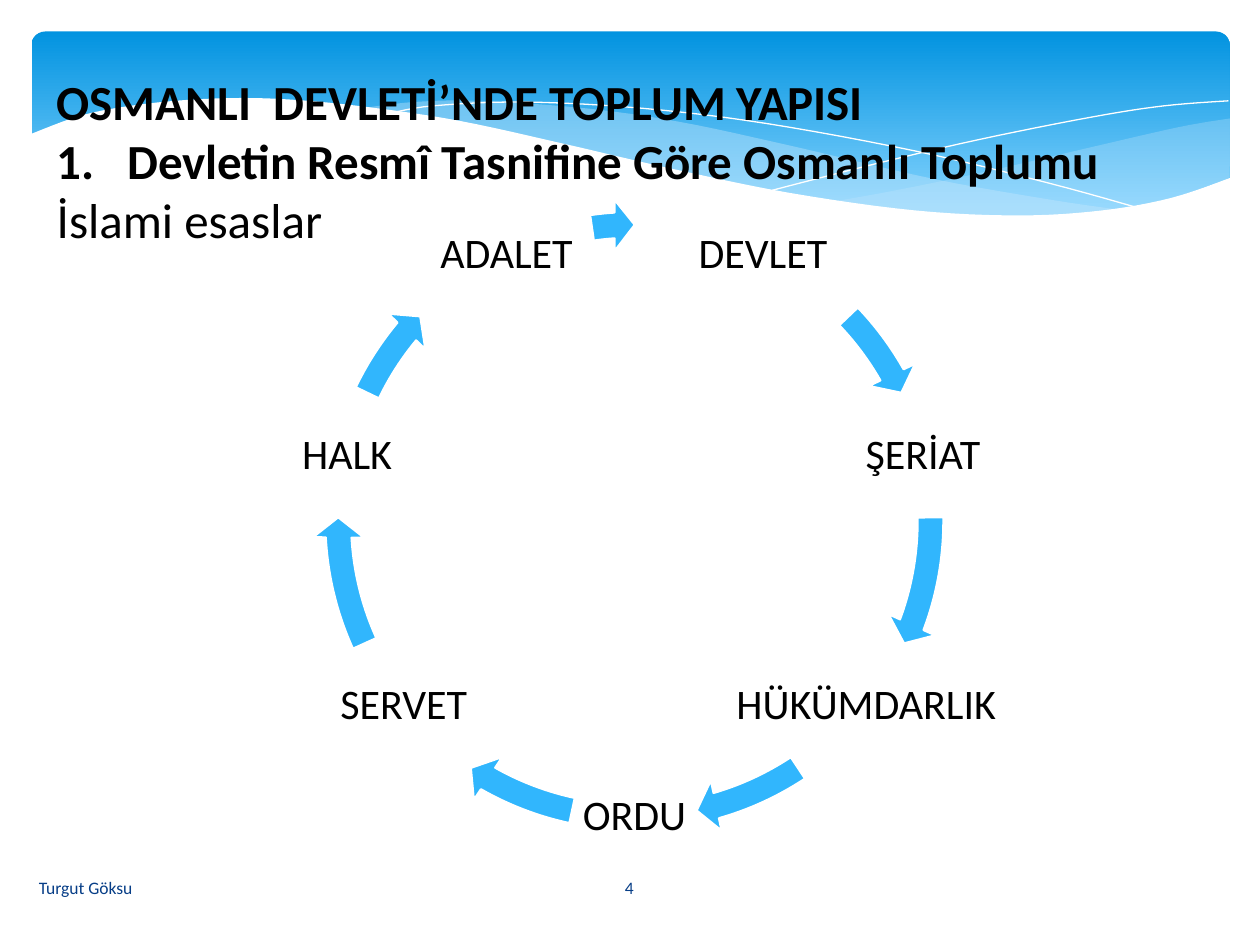
import dataclasses
import typing

import pptx
import pptx.dml.color
import pptx.enum.dml
import pptx.enum.shapes
import pptx.enum.text
import pptx.oxml.ns
import pptx.util
from lxml import etree

Inches = pptx.util.Inches
Align = pptx.enum.text.PP_ALIGN
Anchor = pptx.enum.text.MSO_ANCHOR
Preset = pptx.enum.shapes.MSO_SHAPE
Points = list[tuple[float, float]]


@dataclasses.dataclass(frozen=True)
class Theme:
    font: str = "Calibri"
    ink: str = "000000"
    footer: str = "073E87"
    arrow: str = "31B6FD"
    paper: str = "FFFFFF"
    wave: str = "C6E7FC"
    banner_top: str = "0293E0"
    banner_bottom: str = "83D3FE"
    heading_size: int = 28
    label_size: int = 24
    footer_size: int = 10


@dataclasses.dataclass(frozen=True)
class Wave:
    curve: Points
    edge: Points = dataclasses.field(default_factory=list)
    fill: str | None = None
    opacity: int = 100


class Stage(typing.NamedTuple):
    name: str
    left: float
    top: float
    width: float
    arrow_start: float
    arrow_tip: float


THEME = Theme()

WAVES = [
    Wave([(9.76, 0.94), (9.35, 1.01), (8.61, 1.18), (7.79, 1.37), (7.06, 1.52), (6.61, 1.6),
          (6.61, 1.6), (7.19, 1.67), (7.81, 1.72), (8.35, 1.72), (8.81, 1.67), (9.28, 1.58),
          (9.76, 1.41)], fill=THEME.wave, opacity=29),
    Wave([(8.93, 1.67), (8.37, 1.59), (7.41, 1.42), (6.29, 1.16), (5.41, 0.97), (4.65, 0.86),
          (3.8, 0.8), (3.28, 0.81), (2.86, 0.86), (2.86, 0.86), (3.62, 0.97), (4.49, 1.16),
          (5.66, 1.43), (6.65, 1.61), (7.48, 1.7), (8.18, 1.73), (8.93, 1.67)],
         fill=THEME.wave, opacity=40),
    Wave([(3.09, 0.9), (3.44, 0.84), (4.16, 0.81), (5.1, 0.86), (6.08, 0.98), (7.27, 1.2),
          (8.31, 1.45), (9.07, 1.66)]),
    Wave([(6.13, 1.51), (6.95, 1.3), (7.76, 1.11), (8.66, 0.93), (9.24, 0.84), (9.75, 0.8)]),
    Wave([(9.77, 1.41), (9.3, 1.57), (8.75, 1.67), (8.09, 1.71), (7.26, 1.67), (6.26, 1.53),
          (5.29, 1.33), (4.47, 1.14), (3.65, 0.96), (2.92, 0.85), (2.3, 0.79), (1.77, 0.78),
          (1.19, 0.82), (0.67, 0.91), (0.23, 1.07)],
         edge=[(0.23, 2.24), (9.77, 2.24)], fill=THEME.paper),
]

STAGES = [
    Stage("DEVLET", 5.04, 1.53, 2.03, 316.31, 330.44),
    Stage("ŞERİAT", 6.58, 3.12, 1.49, 359.3, 20.5),
    Stage("HÜKÜMDARLIK", 5.23, 5.11, 3.29, 56.48, 73.95),
    Stage("ORDU", 4.54, 5.99, 0.99, 102.14, 119.6),
    Stage("SERVET", 2.25, 5.11, 1.91, 155.59, 176.79),
    Stage("HALK", 2.26, 3.12, 0.99, 205.64, 219.78),
    Stage("ADALET", 3.34, 1.53, 1.36, 261.77, 266.16),
]


def rgb(value: str) -> pptx.dml.color.RGBColor:
    return pptx.dml.color.RGBColor.from_string(value)


def write(para, text: str, *, size: int, color: str = THEME.ink, bold: bool = False,
          align: Align = Align.LEFT, spacing: float = 1.0) -> None:
    para.alignment = align
    para.line_spacing = spacing
    span = para.add_run()
    span.text = text
    span.font.name = THEME.font
    span.font.size = pptx.util.Pt(size)
    span.font.bold = bold
    span.font.color.rgb = rgb(color)


def add_text(page, text: str, left: float, top: float, width: float, height: float,
             inset: float | None = None, **style) -> None:
    box = page.shapes.add_textbox(Inches(left), Inches(top), Inches(width), Inches(height))
    frame = box.text_frame
    frame.word_wrap = True
    frame.vertical_anchor = Anchor.MIDDLE
    if inset is not None:
        frame.margin_left = frame.margin_right = Inches(inset)
        frame.margin_top = frame.margin_bottom = Inches(inset)
    write(frame.paragraphs[0], text, **style)


def indent(para, hanging: float, numbered: bool = False) -> None:
    properties = para._p.get_or_add_pPr()
    properties.set("marL", str(Inches(hanging)))
    properties.set("indent", str(-Inches(hanging)))
    if numbered:
        number = etree.SubElement(properties, pptx.oxml.ns.qn("a:buAutoNum"))
        number.set("type", "arabicPeriod")


def smooth(knots: Points, steps: int = 6) -> Points:
    padded = [knots[0], *knots, knots[-1]]
    points = [knots[0]]
    for a, b, c, d in zip(padded, padded[1:], padded[2:], padded[3:]):
        for step in range(1, steps + 1):
            t = step / steps
            x, y = (
                0.5 * (2 * q + (r - p) * t + (2 * p - 5 * q + 4 * r - s) * t ** 2
                       + (3 * q - p - 3 * r + s) * t ** 3)
                for p, q, r, s in zip(a, b, c, d)
            )
            points.append((x, y))
    return points


def add_wave(page, wave: Wave) -> None:
    points = [(Inches(x), Inches(y)) for x, y in smooth(wave.curve) + wave.edge]
    builder = page.shapes.build_freeform(*points[0])
    builder.add_line_segments(points[1:], close=wave.fill is not None)
    shape = builder.convert_to_shape()
    shape.shadow.inherit = False
    if wave.fill is None:
        shape.fill.background()
        shape.line.color.rgb = rgb(THEME.paper)
        shape.line.width = 0
        return
    shape.fill.solid()
    shape.fill.fore_color.rgb = rgb(wave.fill)
    shape.line.fill.background()
    if wave.opacity < 100:
        color = shape.fill._xPr.find(".//" + pptx.oxml.ns.qn("a:srgbClr"))
        etree.SubElement(color, pptx.oxml.ns.qn("a:alpha")).set("val", str(wave.opacity * 1000))


def add_banner(page) -> None:
    banner = page.shapes.add_shape(Preset.ROUNDED_RECTANGLE, Inches(0.25), Inches(0.25),
                                   Inches(9.51), Inches(1.56))
    banner.adjustments[0] = 0.07
    banner.shadow.inherit = False
    banner.line.fill.background()
    banner.fill.gradient()
    banner.fill.gradient_angle = 270
    colors = [(0, THEME.banner_top), (0.9, THEME.banner_bottom)]
    for stop, (position, color) in zip(banner.fill.gradient_stops, colors):
        stop.position = position
        stop.color.rgb = rgb(color)
    for wave in WAVES:
        add_wave(page, wave)


def add_heading(page) -> None:
    title = page.shapes.title
    title.left, title.top = Inches(0.35), Inches(0.52)
    title.width, title.height = Inches(9.37), Inches(1.51)
    page.shapes.element.append(title.element)
    frame = title.text_frame
    frame.vertical_anchor = Anchor.TOP
    frame.word_wrap = True
    frame.auto_size = pptx.enum.text.MSO_AUTO_SIZE.SHAPE_TO_FIT_TEXT
    style = {"size": THEME.heading_size, "align": Align.JUSTIFY}
    first = frame.paragraphs[0]
    write(first, "OSMANLI  DEVLETİ’NDE TOPLUM YAPISI", bold=True, **style)
    indent(first, 0.25)
    second = frame.add_paragraph()
    write(second, "Devletin Resmî Tasnifine Göre Osmanlı Toplumu", bold=True, **style)
    indent(second, 0.56, numbered=True)
    write(frame.add_paragraph(), "İslami esaslar", **style)


def add_stage(page, stage: Stage) -> None:
    add_text(page, stage.name, stage.left, stage.top, stage.width, 0.99, inset=0.03,
             size=THEME.label_size, align=Align.CENTER, spacing=0.9)
    arrow = page.shapes.add_shape(Preset.CIRCULAR_ARROW, Inches(2.48), Inches(1.58),
                                  Inches(5.11), Inches(5.11))
    angles = [degrees * 0.6 for degrees in (3.92, stage.arrow_tip, stage.arrow_start)]
    for index, value in enumerate([0.04, *angles, 0.04]):
        arrow.adjustments[index] = value
    arrow.shadow.inherit = False
    arrow.fill.solid()
    arrow.fill.fore_color.rgb = rgb(THEME.arrow)
    arrow.line.color.rgb = rgb(THEME.paper)
    arrow.line.width = pptx.util.Pt(1.25)


def main() -> None:
    deck = pptx.Presentation()
    deck.slide_width, deck.slide_height = Inches(10), Inches(7.5)
    page = deck.slides.add_slide(deck.slide_layouts.get_by_name("Title Only"))
    add_banner(page)
    footer = {"size": THEME.footer_size, "color": THEME.footer}
    add_text(page, "Turgut Göksu", 0.21, 6.84, 4.14, 0.4, **footer)
    add_text(page, "4", 4.36, 6.84, 1.27, 0.4, align=Align.CENTER, **footer)
    add_heading(page)
    for stage in STAGES:
        add_stage(page, stage)
    deck.save("out.pptx")


if __name__ == "__main__":
    main()
